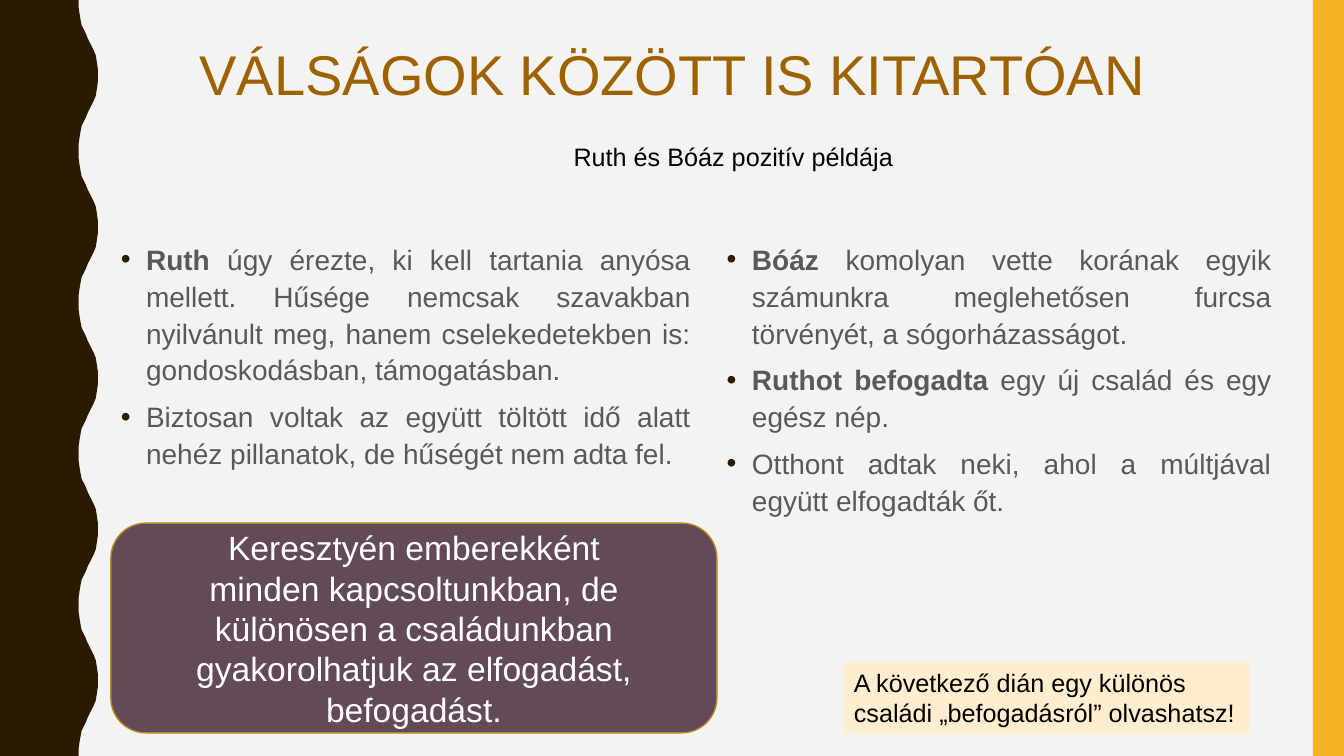
from dataclasses import dataclass

from lxml.etree import SubElement
from pptx import Presentation
from pptx.dml.color import RGBColor
from pptx.enum.shapes import MSO_SHAPE
from pptx.enum.text import MSO_ANCHOR, PP_ALIGN
from pptx.oxml.ns import qn
from pptx.util import Inches, Pt


@dataclass(frozen=True)
class Theme:
    font: str = "Arial"
    back: str = "F3F3F2"
    dark: str = "2A1A00"
    gold: str = "F8B323"
    title: str = "9F6200"
    body: str = "595959"
    plum: str = "624A58"
    edge: str = "B7841A"
    cream: str = "FFEDD0"
    black: str = "000000"
    white: str = "FFFFFF"
    huge: int = 40
    large: int = 24
    medium: int = 20
    small: int = 18


class Deck:
    def __init__(self, theme):
        self.theme = theme
        self.show = Presentation()
        self.show.slide_width = Inches(13.33)
        self.show.slide_height = Inches(7.5)
        self.slide = self.show.slides.add_slide(self.show.slide_layouts[6])
        back = self.slide.background.fill
        back.solid()
        back.fore_color.rgb = RGBColor.from_string(theme.back)

    def paint(self, shape, fill, edge=None):
        shape.shadow.inherit = False
        shape.fill.solid()
        shape.fill.fore_color.rgb = RGBColor.from_string(fill)
        if edge:
            shape.line.color.rgb = RGBColor.from_string(edge)
            shape.line.width = Pt(1)
        else:
            shape.line.fill.background()

    def wave(self, half, period, count, fill):
        cycle = half + [(x, period - y) for x, y in half[-2::-1]]
        points = [(x, y + turn * period) for turn in range(count) for x, y in cycle]
        points.append((0, count * period))
        outline = self.slide.shapes.build_freeform(0, 0)
        outline.add_line_segments([(Inches(x), Inches(y)) for x, y in points])
        self.paint(outline.convert_to_shape(), fill)

    def block(self, kind, box, fill, edge=None):
        shape = self.slide.shapes.add_shape(kind, *map(Inches, box))
        self.paint(shape, fill, edge)
        return shape

    def label(self, box):
        return self.slide.shapes.add_textbox(*map(Inches, box))

    def letter(self, shape, lines, size, color, align=PP_ALIGN.LEFT,
               anchor=MSO_ANCHOR.TOP, wrap=True, space=1.0):
        frame = shape.text_frame
        frame.word_wrap = wrap
        frame.vertical_anchor = anchor
        frame.text = "\n".join(lines)
        for para in frame.paragraphs:
            para.alignment = align
            para.line_spacing = space
            self.style(para, size, color)

    def style(self, para, size, color):
        for run in para.runs:
            run.font.name = self.theme.font
            run.font.size = Pt(size)
            run.font.color.rgb = RGBColor.from_string(color)

    def bullets(self, box, items):
        frame = self.label(box).text_frame
        frame.word_wrap = True
        for index, (lead, rest) in enumerate(items):
            para = frame.add_paragraph() if index else frame.paragraphs[0]
            para.text = lead or rest
            if lead:
                para.runs[0].font.bold = True
                para.add_run().text = rest
            para.alignment = PP_ALIGN.JUSTIFY
            para.line_spacing = 1.1
            para.space_before = Pt(7)
            self.style(para, self.theme.medium, self.theme.body)
            self.bullet(para)

    def bullet(self, para):
        props = para._p.get_or_add_pPr()
        props.set("marL", str(Inches(0.25)))
        props.set("indent", str(-Inches(0.25)))
        tint = SubElement(props, qn("a:buClr"))
        SubElement(tint, qn("a:srgbClr"), val=self.theme.dark)
        SubElement(props, qn("a:buFont"), typeface=self.theme.font)
        SubElement(props, qn("a:buChar"), char="•")


def main():
    theme = Theme()
    deck = Deck(theme)

    half = [(0.78, 0), (0.78, 0.07), (0.79, 0.14), (0.8, 0.2), (0.81, 0.25),
            (0.83, 0.29), (0.85, 0.33), (0.87, 0.38), (0.89, 0.42), (0.91, 0.46),
            (0.93, 0.5), (0.95, 0.55), (0.96, 0.61), (0.97, 0.68), (0.97, 0.75)]
    deck.wave(half, 1.5, 5, theme.dark)
    deck.block(MSO_SHAPE.RECTANGLE, (13.02, 0, 0.31, 7.5), theme.gold)

    title = deck.label((1.37, 0.42, 10.75, 0.94))
    deck.letter(title, ["VÁLSÁGOK KÖZÖTT IS KITARTÓAN "], theme.huge, theme.title,
                PP_ALIGN.CENTER, space=0.9)

    deck.bullets((1.1, 2.32, 5.85, 2.67), [
        ("Ruth ", "úgy érezte, ki kell tartania anyósa mellett. Hűsége nemcsak "
         "szavakban nyilvánult meg, hanem cselekedetekben is: "
         "gondoskodásban, támogatásban. "),
        ("", "Biztosan voltak az együtt töltött idő alatt nehéz pillanatok, "
         "de hűségét nem adta fel."),
    ])
    deck.bullets((7.11, 2.32, 5.6, 2.91), [
        ("Bóáz", " komolyan vette korának egyik számunkra meglehetősen furcsa "
         "törvényét, a sógorházasságot."),
        ("Ruthot befogadta ", "egy új család és egy egész nép. "),
        ("", "Otthont adtak neki, ahol a múltjával együtt elfogadták őt. "),
    ])

    topic = deck.label((5.59, 1.35, 3.4, 0.4))
    deck.letter(topic, ["Ruth és Bóáz pozitív példája"], theme.small, theme.black,
                wrap=False)

    moral = deck.block(MSO_SHAPE.ROUNDED_RECTANGLE, (1.1, 5.19, 6.01, 2.08),
                       theme.plum, theme.edge)
    deck.letter(moral, ["Keresztyén emberekként",
                        "minden kapcsoltunkban, de különösen a családunkban "
                        "gyakorolhatjuk az elfogadást, befogadást."],
                theme.large, theme.white, PP_ALIGN.CENTER, MSO_ANCHOR.MIDDLE)

    hint = deck.block(MSO_SHAPE.RECTANGLE, (8.37, 6.57, 4.02, 0.71), theme.cream)
    deck.letter(hint, ["A következő dián egy különös",
                       "családi „befogadásról” olvashatsz!"],
                theme.small, theme.black, wrap=False)

    deck.show.save("out.pptx")


if __name__ == "__main__":
    main()
